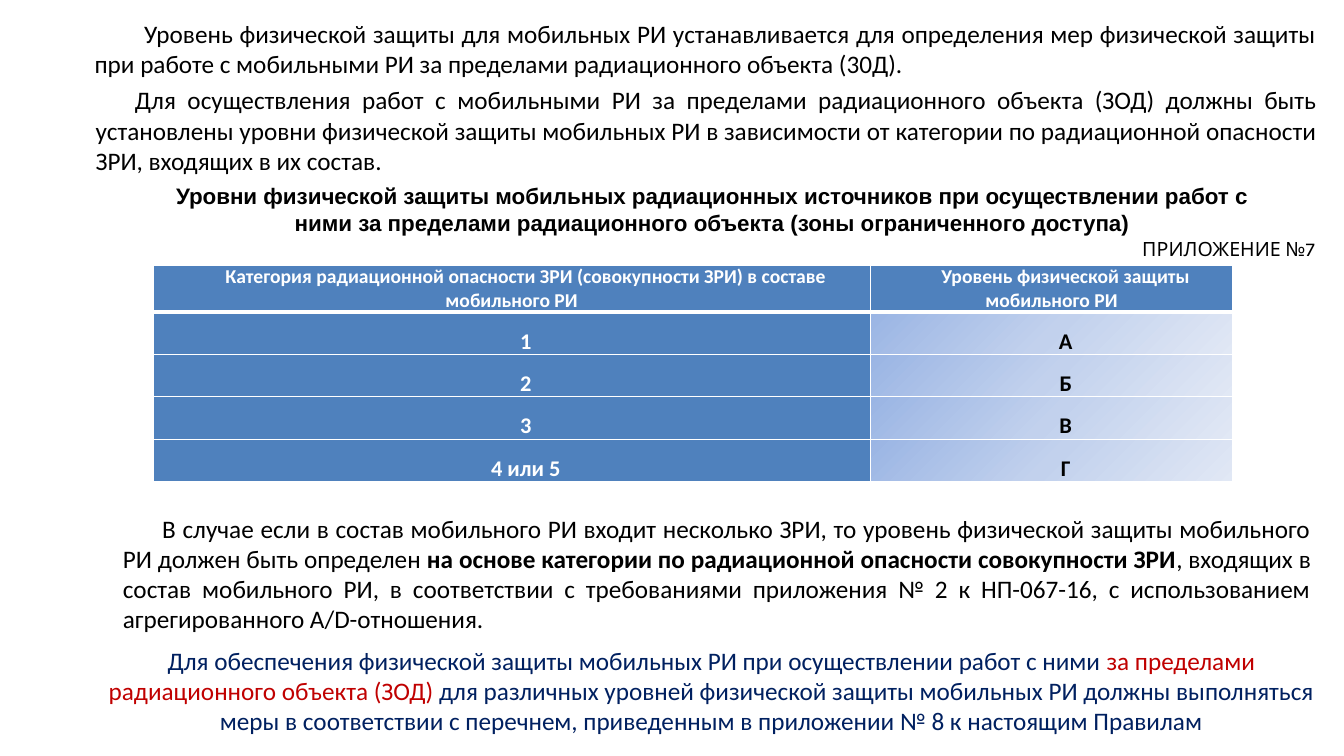
from dataclasses import dataclass
from lxml import etree
from pptx import Presentation
from pptx.dml.color import RGBColor
from pptx.enum.text import MSO_ANCHOR, PP_ALIGN
from pptx.oxml.ns import qn
from pptx.util import Inches, Pt


@dataclass(frozen=True)
class Theme:
    body: str = "Calibri"
    title: str = "Arial"
    label: str = "Karla"
    black: str = "000000"
    white: str = "FFFFFF"
    blue: str = "4F81BD"
    navy: str = "002060"
    red: str = "C00000"
    fade: tuple = ((0, "9AB5E4"), (50, "C2D1ED"), (100, "E1E8F5"))
    big: int = 18
    mid: int = 16
    small: int = 14


class Page:
    def __init__(self, deck, theme):
        self.theme = theme
        self.slide = deck.slides.add_slide(deck.slide_layouts[6])

    def add_runs(self, para, runs, font, size, align, left=0, indent=0):
        """Fill a paragraph with (text, colour, bold) runs."""
        para.alignment = align
        props = para._p.get_or_add_pPr()
        props.set("marL", str(Inches(left)))
        props.set("indent", str(Inches(indent)))
        for text, color, bold in runs:
            run = para.add_run()
            run.text = text
            run.font.name = font
            run.font.size = Pt(size)
            run.font.bold = bold
            run.font.color.rgb = RGBColor.from_string(color)

    def text(self, box, runs, font=None, size=None, align=PP_ALIGN.JUSTIFY,
             left=0, indent=0, wrap=True):
        frame = self.slide.shapes.add_textbox(*map(Inches, box)).text_frame
        frame.word_wrap = wrap
        self.add_runs(frame.paragraphs[0], runs, font or self.theme.body,
                      size or self.theme.big, align, left, indent)

    def border(self, cell, sides):
        props = cell._tc.get_or_add_tcPr()
        for side, width in sides.items():
            line = etree.SubElement(props, qn(f"a:ln{side}"), w=str(Pt(width)))
            fill = etree.SubElement(line, qn("a:solidFill"))
            etree.SubElement(fill, qn("a:srgbClr"), val=self.theme.white)

    def blend(self, cell):
        """Give a cell the diagonal three-stop gradient."""
        props = cell._tc.get_or_add_tcPr()
        grad = etree.SubElement(props, qn("a:gradFill"), rotWithShape="1")
        stops = etree.SubElement(grad, qn("a:gsLst"))
        for place, color in self.theme.fade:
            stop = etree.SubElement(stops, qn("a:gs"), pos=str(place * 1000))
            etree.SubElement(stop, qn("a:srgbClr"), val=color)
        etree.SubElement(grad, qn("a:lin"), ang=str(45 * 60000), scaled="0")

    def table(self, box, widths, heights, rows):
        theme = self.theme
        grid = self.slide.shapes.add_table(
            len(rows), len(widths), *map(Inches, box)).table
        grid.first_row = grid.horz_banding = False
        for col, width in zip(grid.columns, widths):
            col.width = Inches(width)
        for r, (row, height) in enumerate(zip(rows, heights)):
            grid.rows[r].height = Inches(height)
            for c, text in enumerate(row):
                cell = grid.cell(r, c)
                head, level = r == 0, r > 0 and c == 1
                cell.vertical_anchor = MSO_ANCHOR.BOTTOM
                cell.margin_left = cell.margin_right = Inches(0.01)
                cell.margin_top = cell.margin_bottom = 0
                # Thick rule between the header and the body
                self.border(cell, {"L": 1, "R": 1, "T": 3 if r == 1 else 1,
                                   "B": 3 if head else 1})
                if level:
                    self.blend(cell)
                else:
                    cell.fill.solid()
                    cell.fill.fore_color.rgb = RGBColor.from_string(theme.blue)
                para = cell.text_frame.paragraphs[0]
                if not head:
                    para.line_spacing = 1.57
                color = theme.black if level else theme.white
                self.add_runs(para, [(text, color, True)], theme.body,
                              theme.small if head else theme.mid,
                              PP_ALIGN.CENTER, indent=0.28)


def main():
    deck = Presentation()
    deck.slide_width, deck.slide_height = Inches(13.33), Inches(7.5)
    theme = Theme()
    page = Page(deck, theme)
    black, navy = theme.black, theme.navy

    # Table heading and appendix label
    page.text((1.31, 1.76, 11.36, 0.64), [
        ("Уровни физической защиты мобильных радиационных источников при "
         "осуществлении работ с ними за пределами радиационного объекта "
         "(зоны ограниченного доступа)", black, True),
    ], theme.title, theme.mid, PP_ALIGN.CENTER, left=0.15)
    page.text((11.23, 2.3, 1.99, 0.34), [("ПРИЛОЖЕНИЕ №7", black, False)],
              theme.label, theme.small, PP_ALIGN.LEFT, wrap=False)

    # Protection levels by hazard category
    page.table((1.52, 2.63, 10.71, 2.14), (7.11, 3.6), [0.46] + [0.42] * 4, [
        ("Категория радиационной опасности ЗРИ (совокупности ЗРИ) в составе "
         "мобильного РИ", "Уровень физической защиты мобильного РИ"),
        ("1", "А"), ("2", "Б"), ("3", "В"), ("4 или 5", "Г"),
    ])

    # Introduction
    page.text((0.84, 0.13, 12.31, 0.71), [
        ("Уровень физической защиты для мобильных РИ устанавливается для "
         "определения мер физической защиты при работе с мобильными РИ за "
         "пределами радиационного объекта (30Д).", black, False),
    ], indent=0.49)
    page.text((0.85, 0.79, 12.31, 1.01), [
        ("Для осуществления работ с мобильными РИ за пределами радиационного "
         "объекта (ЗОД) должны быть установлены уровни физической защиты "
         "мобильных РИ в зависимости от категории по радиационной опасности "
         "ЗРИ, входящих в их состав.", black, False),
    ], indent=0.39)

    # Rule for several sources
    page.text((1.12, 5.04, 11.98, 1.31), [
        ("В случае если в состав мобильного РИ входит несколько ЗРИ, то "
         "уровень физической защиты мобильного РИ должен быть определен ",
         black, False),
        ("на основе категории по радиационной опасности совокупности ЗРИ",
         black, True),
        (", входящих в состав мобильного РИ, в соответствии с требованиями "
         "приложения № 2 к НП-067-16, с использованием агрегированного "
         "A/D-отношения.", black, False),
    ], indent=0.39)

    # Closing requirement
    page.text((0.9, 6.35, 12.31, 1.01), [
        ("Для обеспечения физической защиты мобильных РИ при осуществлении "
         "работ с ними ", navy, False),
        ("за пределами радиационного объекта (ЗОД)", theme.red, False),
        (" для различных уровней физической защиты мобильных РИ должны "
         "выполняться меры в соответствии с перечнем, приведенным в "
         "приложении № 8 к настоящим Правилам", navy, False),
    ], align=PP_ALIGN.CENTER)

    deck.save("out.pptx")


if __name__ == "__main__":
    main()
